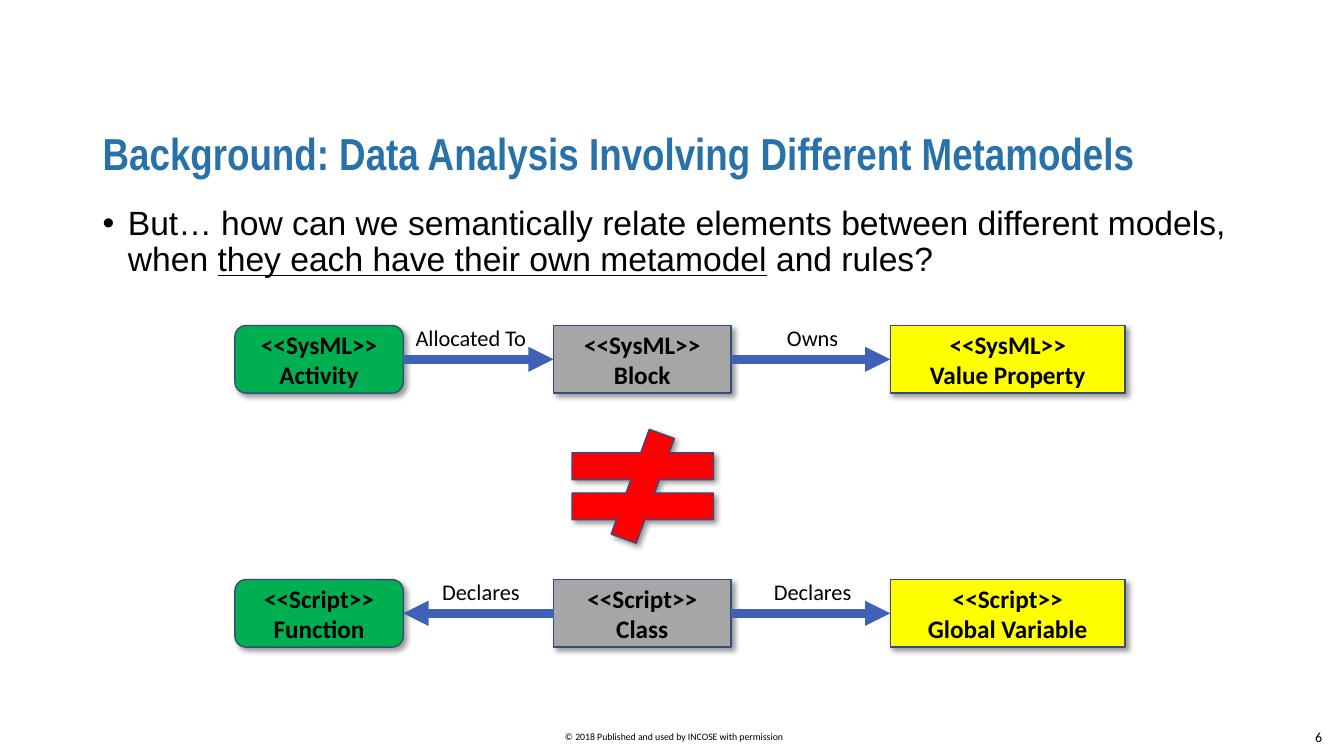
from collections import namedtuple
from dataclasses import dataclass

from lxml import etree
from pptx import Presentation
from pptx import util as u
from pptx.dml.color import RGBColor
from pptx.enum import shapes, text
from pptx.oxml.ns import qn

Box = namedtuple("Box", "left top width height")
Node = namedtuple("Node", "kind fill left width")
Link = namedtuple("Link", "start end label centre")


@dataclass(frozen=True)
class Theme:
    heading_font: str = "Arial Narrow"
    body_font: str = "Arial"
    diagram_font: str = "Calibri"
    title: str = "2971A9"
    ink: str = "000000"
    outline: str = "374B7F"
    arrow: str = "4062B6"
    green: str = "00B050"
    grey: str = "A6A6A6"
    yellow: str = "FFFF00"
    red: str = "FF0000"
    title_size: int = 32
    body_size: int = 24
    node_size: int = 18
    label_size: int = 16
    number_size: int = 10
    footer_size: int = 7


THEME = Theme()
LEFT, MIDDLE, RIGHT = range(3)
LEFT_SIDE, RIGHT_SIDE = 1, 3
NODES = [
    Node(shapes.MSO_SHAPE.ROUNDED_RECTANGLE, THEME.green, 0, 1.67),
    Node(shapes.MSO_SHAPE.RECTANGLE, THEME.grey, 3.16, 1.76),
    Node(shapes.MSO_SHAPE.RECTANGLE, THEME.yellow, 6.5, 2.33),
]


def inches(box):
    return [u.Inches(length) for length in box]


def add_span(para, words, size, font, color=THEME.ink, bold=False, underline=False):
    span = para.add_run()
    span.text = words
    span.font.size = u.Pt(size)
    span.font.name = font
    span.font.color.rgb = RGBColor.from_string(color)
    span.font.bold = bold
    span.font.underline = underline


def add_text_box(page, box, anchor=text.MSO_ANCHOR.TOP, align=text.PP_ALIGN.LEFT):
    """Add an empty wrapping text box and return its first paragraph."""
    frame = page.shapes.add_textbox(*inches(box)).text_frame
    frame.word_wrap = True
    frame.vertical_anchor = anchor
    para = frame.paragraphs[0]
    para.alignment = align
    return para


def add_shadow(shape):
    """Give the shape a soft shadow towards the lower right."""
    shape.shadow.inherit = False
    effects = shape._element.spPr.find(qn("a:effectLst"))
    shadow = etree.SubElement(
        effects, qn("a:outerShdw"), blurRad=str(u.Pt(4)), dist=str(u.Pt(3)),
        dir=str(45 * 60000), algn="tl", rotWithShape="0")
    color = etree.SubElement(shadow, qn("a:srgbClr"), val=THEME.ink)
    etree.SubElement(color, qn("a:alpha"), val="40000")


def add_figure(page, kind, box, fill):
    shape = page.shapes.add_shape(kind, *inches(box))
    shape.fill.solid()
    shape.fill.fore_color.rgb = RGBColor.from_string(fill)
    shape.line.color.rgb = RGBColor.from_string(THEME.outline)
    shape.line.width = u.Pt(1)
    add_shadow(shape)
    return shape


def add_node(page, node, box, lines):
    shape = add_figure(page, node.kind, box, node.fill)
    frame = shape.text_frame
    frame.word_wrap = True
    frame.vertical_anchor = text.MSO_ANCHOR.MIDDLE
    for index, line in enumerate(lines):
        para = frame.add_paragraph() if index else frame.paragraphs[0]
        para.alignment = text.PP_ALIGN.CENTER
        add_span(para, line, THEME.node_size, THEME.diagram_font, bold=True)
    return shape


def add_arrow(page, start, end):
    """Join the facing sides of two nodes with an arrow."""
    sides = (RIGHT_SIDE, LEFT_SIDE) if start.left < end.left else (LEFT_SIDE, RIGHT_SIDE)
    arrow = page.shapes.add_connector(shapes.MSO_CONNECTOR.STRAIGHT, 0, 0, 0, 0)
    arrow.begin_connect(start, sides[0])
    arrow.end_connect(end, sides[1])
    arrow.line.color.rgb = RGBColor.from_string(THEME.arrow)
    arrow.line.width = u.Pt(6)
    etree.SubElement(arrow.line._get_or_add_ln(), qn("a:tailEnd"), type="triangle")
    etree.SubElement(arrow._element.spPr, qn("a:effectLst"))


def add_model_row(page, box, stereotype, names, links):
    """Place three nodes of one metamodel, with labelled arrows between them."""
    row = [
        add_node(page, node, Box(box.left + node.left, box.top, node.width, box.height),
                 [stereotype, name])
        for node, name in zip(NODES, names)
    ]
    width = 1.33
    for link in links:
        add_arrow(page, row[link.start], row[link.end])
        label_box = Box(box.left + link.centre - width / 2, box.top - 0.06, width, 0.37)
        para = add_text_box(page, label_box, align=text.PP_ALIGN.CENTER)
        add_span(para, link.label, THEME.label_size, THEME.diagram_font)


def add_title(page, box):
    para = add_text_box(page, box, text.MSO_ANCHOR.MIDDLE)
    para.line_spacing = 0.9
    add_span(para, "Background: Data Analysis Involving Different Metamodels",
             THEME.title_size, THEME.heading_font, THEME.title, bold=True)


def add_question(page, box):
    para = add_text_box(page, box)
    para.line_spacing = 0.9
    properties = para._p.get_or_add_pPr()
    properties.set("marL", str(u.Inches(0.25)))
    properties.set("indent", str(u.Inches(-0.25)))
    etree.SubElement(properties, qn("a:buFont"), typeface=THEME.body_font)
    etree.SubElement(properties, qn("a:buChar"), char="•")
    for words, underline in [
        ("But… how can we semantically relate elements between different models, when ", False),
        ("they each have their own metamodel", True),
        (" and rules?", False),
    ]:
        add_span(para, words, THEME.body_size, THEME.body_font, underline=underline)


def add_diagram(page, box):
    row = Box(box.left, box.top, box.width, 0.67)
    add_model_row(page, row, "<<SysML>>", ["Activity", "Block", "Value Property"], [
        Link(LEFT, MIDDLE, "Allocated To", 2.34),
        Link(MIDDLE, RIGHT, "Owns", 5.73),
    ])
    lower_row = row._replace(top=box.top + box.height - row.height)
    add_model_row(page, lower_row, "<<Script>>", ["Function", "Class", "Global Variable"], [
        Link(MIDDLE, LEFT, "Declares", 2.44),
        Link(MIDDLE, RIGHT, "Declares", 5.73),
    ])
    sign_box = Box(box.left + 3.09, box.top + 1.03, 1.91, 1.13)
    add_figure(page, shapes.MSO_SHAPE.MATH_NOT_EQUAL, sign_box, THEME.red)


def add_footer(page, box):
    copyright_box = Box(box.left + 4.81, box.top + 0.09, 3.75, 0.22)
    para = add_text_box(page, copyright_box, align=text.PP_ALIGN.CENTER)
    add_span(para, "© 2018 Published and used by INCOSE with permission",
             THEME.footer_size, THEME.diagram_font)
    number_box = Box(box.left + box.width - 0.5, box.top, 0.5, box.height)
    para = add_text_box(page, number_box, text.MSO_ANCHOR.MIDDLE, text.PP_ALIGN.CENTER)
    add_span(para, "6", THEME.number_size, THEME.diagram_font)


def main():
    deck = Presentation()
    deck.slide_width, deck.slide_height = u.Inches(13.33), u.Inches(7.5)
    page = deck.slides.add_slide(deck.slide_layouts[6])
    add_title(page, Box(0.92, 1.17, 11.67, 0.75))
    add_question(page, Box(0.92, 2, 11.67, 1.08))
    add_diagram(page, Box(2.33, 3.23, 8.83, 3.19))
    add_footer(page, Box(0, 7.11, 13.33, 0.4))
    deck.save("out.pptx")


if __name__ == "__main__":
    main()
